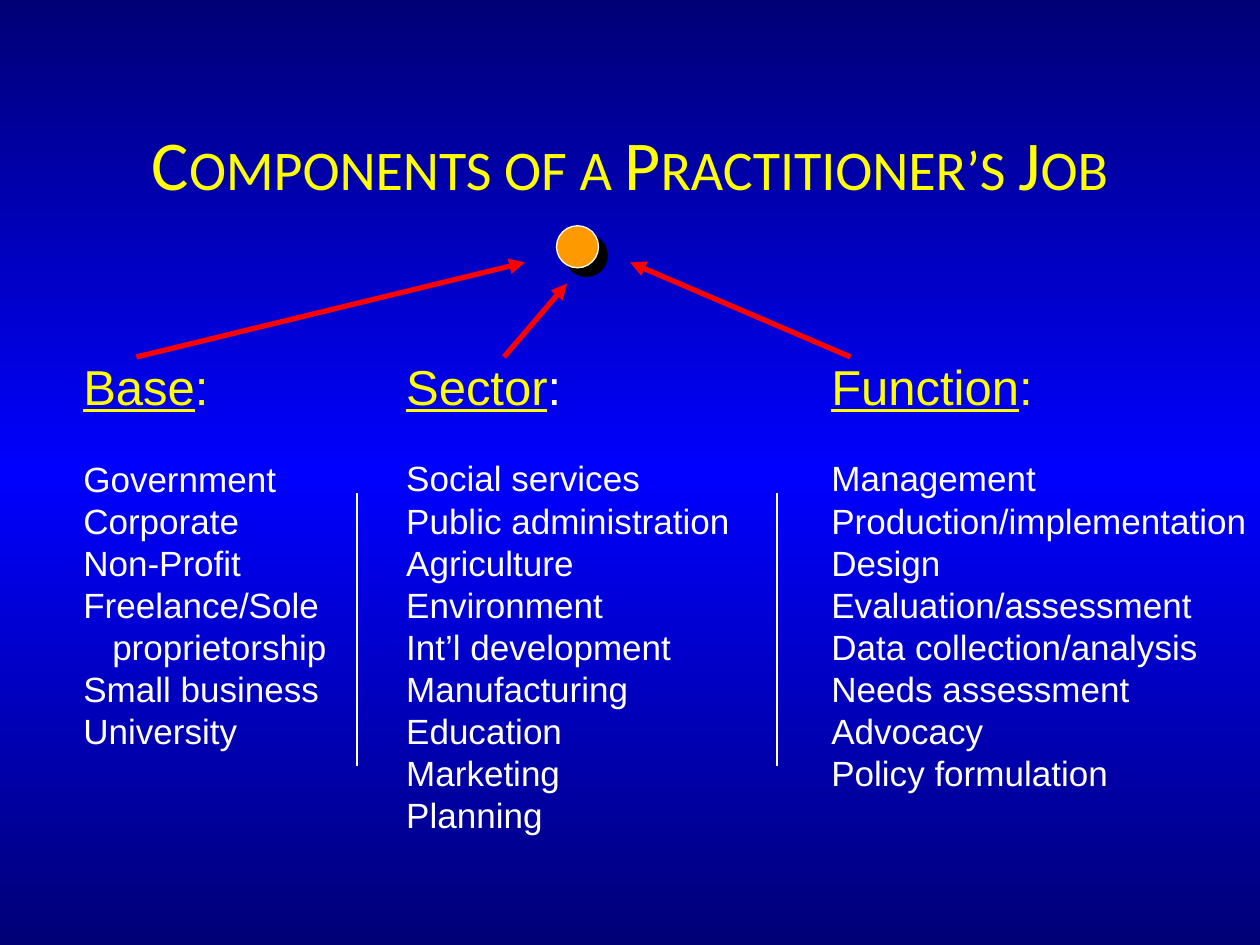
from lxml import etree
from pptx import Presentation, util as u
from pptx.dml.color import RGBColor as Rgb
from pptx.enum import shapes, text
from pptx.oxml import parse_xml
from pptx.oxml.ns import nsdecls, qn

THEME = {
    "edge": "000076", "mid": "0000FF", "head": "FFFF00", "body": "FFFFFF",
    "dot": "FF9900", "arrow": "FF0000", "shade": "000000",
    "title_font": "Calibri", "font": "Arial",
    "title_size": 40, "head_size": 28, "size": 20,
}

deck = Presentation()
deck.slide_width, deck.slide_height = u.Inches(10), u.Inches(7.5)
UNIT = deck.slide_width / 120  # square grid: 120 columns, 90 rows
slide = deck.slides.add_slide(deck.slide_layouts[6])


def grid(*cells):
    return [round(c * UNIT) for c in cells]


def style(run, size, color, font=THEME["font"]):
    run.font.size, run.font.name = u.Pt(size), font
    run.font.color.rgb = Rgb.from_string(color)


# Background: dark edges, bright middle
fill = slide.background.fill
fill.gradient()
fill.gradient_angle = 270
stops = slide.background._cSld.find(".//" + qn("a:gsLst"))
for stop in list(stops):
    stops.remove(stop)
for share, color in ((0, "edge"), (50, "mid"), (100, "edge")):
    stops.append(parse_xml(
        f'<a:gs {nsdecls("a")} pos="{share * 1000}">'
        f'<a:srgbClr val="{THEME[color]}"/></a:gs>'))

# Title
frame = slide.shapes.add_textbox(*grid(9, 8, 102, 15)).text_frame
frame.word_wrap = True
frame.vertical_anchor = text.MSO_ANCHOR.MIDDLE
frame.text = "Components of a Practitioner’s Job"
para = frame.paragraphs[0]
para.alignment = text.PP_ALIGN.CENTER
style(para.runs[0], THEME["title_size"], THEME["head"], THEME["title_font"])
para.runs[0].font._element.set("cap", "small")

# Three lists: left, width, height, heading, colon colour, items
lists = (
    (6.75, 25.8, 39.2, "Base", "head",
     ("Government", "Corporate", "Non-Profit", "Freelance/Sole",
      "proprietorship", "Small business", "University")),
    (37.5, 33.5, 47.3, "Sector", "body",
     ("Social services", "Public administration", "Agriculture",
      "Environment", "Int’l development", "Manufacturing", "Education",
      "Marketing", "Planning")),
    (78, 42.2, 43.2, "Function", "head",
     ("Management", "Production/implementation", "Design",
      "Evaluation/assessment", "Data collection/analysis",
      "Needs assessment", "Advocacy", "Policy formulation")),
)
for left, width, height, head, colon, items in lists:
    frame = slide.shapes.add_textbox(*grid(left, 33.33, width, height)).text_frame
    frame.word_wrap = False
    frame.auto_size = text.MSO_AUTO_SIZE.SHAPE_TO_FIT_TEXT
    para = frame.paragraphs[0]
    para.space_after = u.Pt(24)
    for part, color in ((head, "head"), (":", colon)):
        run = para.add_run()
        run.text = part
        style(run, THEME["head_size"], THEME[color])
        run.font.underline = part == head
    for item in items:
        para = frame.add_paragraph()
        para.text = item
        style(para.runs[0], THEME["size"], THEME["body"])
        if item == "proprietorship":  # second line of the item above
            para._p.get_or_add_pPr().set("marL", str(u.Inches(0.23)))

# Dot with a hard shadow
dot = slide.shapes.add_shape(shapes.MSO_SHAPE.OVAL, *grid(53, 21.5, 4, 4))
dot.fill.solid()
dot.fill.fore_color.rgb = Rgb.from_string(THEME["dot"])
dot.line.color.rgb = Rgb.from_string(THEME["body"])
dot.line.width = u.Pt(0.75)
dot.shadow.inherit = False
dot._element.spPr.find(qn("a:effectLst")).append(parse_xml(
    f'<a:outerShdw {nsdecls("a")} dist="{u.Pt(7.1)}" dir="2700000" '
    f'algn="ctr" rotWithShape="0"><a:srgbClr val="{THEME["shade"]}"/>'
    '</a:outerShdw>'))

# Arrows to the dot, then rules between the lists
arrows = [(13, 34, 50, 25), (48, 34, 54, 27), (81, 34, 60, 25)]
rules = [(col, 47, col, 73) for col in (34, 74)]
for ends in arrows + rules:
    arrow = ends in arrows
    link = slide.shapes.add_connector(shapes.MSO_CONNECTOR.STRAIGHT, *grid(*ends))
    link.line.color.rgb = Rgb.from_string(THEME["arrow" if arrow else "body"])
    link.line.width = u.Pt(3 if arrow else 0.75)
    if arrow:
        etree.SubElement(link.line._get_or_add_ln(), qn("a:tailEnd"), type="triangle")
    etree.SubElement(link._element.spPr, qn("a:effectLst"))

deck.save("out.pptx")
